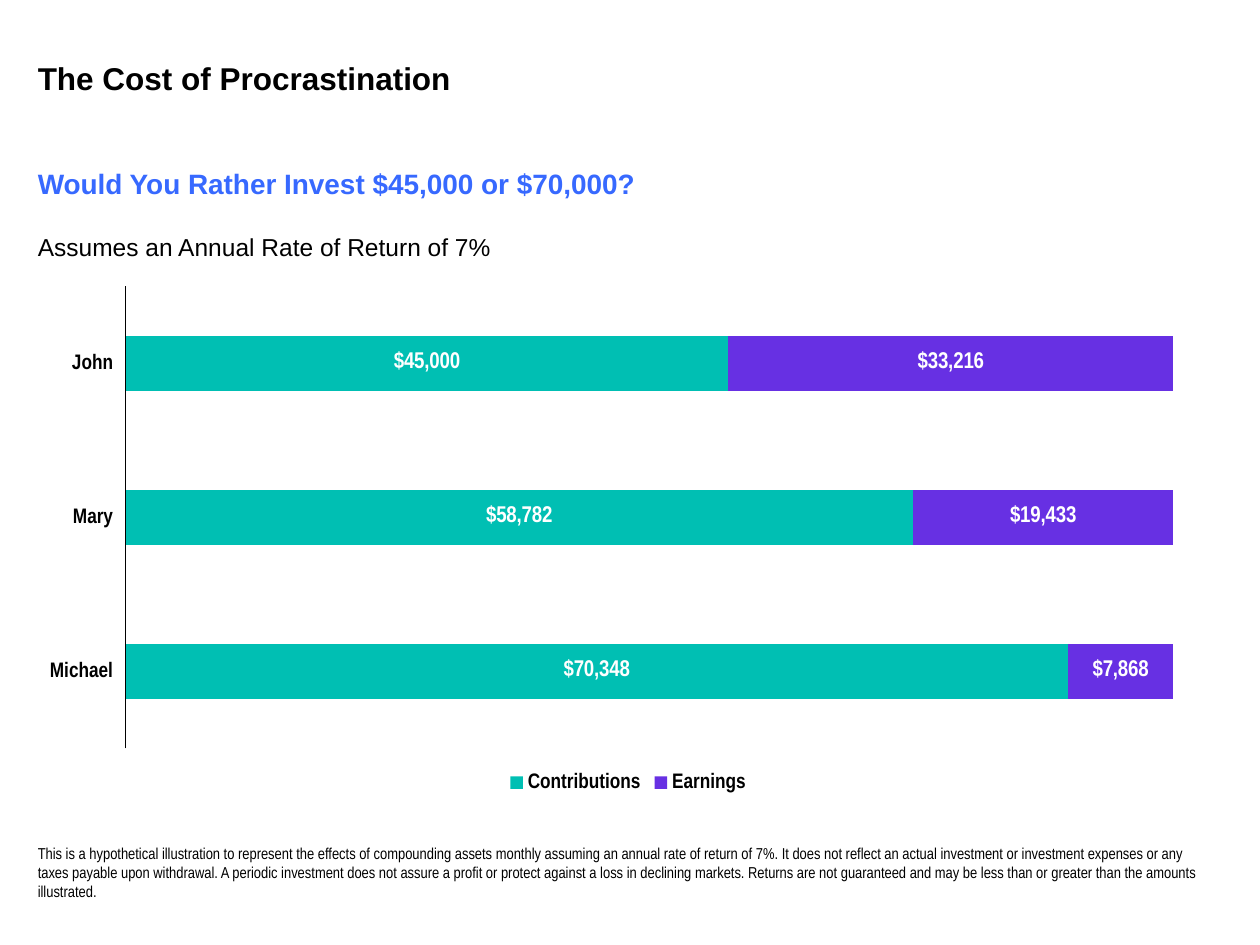
from lxml.etree import SubElement
from pptx import Presentation
from pptx.chart.data import CategoryChartData
from pptx.dml.color import RGBColor
from pptx.enum.chart import XL_CHART_TYPE as ChartType, XL_LABEL_POSITION as LabelPosition
from pptx.enum.chart import XL_LEGEND_POSITION as LegendPosition, XL_TICK_LABEL_POSITION as TickLabels
from pptx.enum.chart import XL_TICK_MARK as TickMark
from pptx.enum.text import MSO_ANCHOR as Anchor, PP_ALIGN as Align
from pptx.oxml.ns import qn
from pptx.util import Inches, Pt

COLORS = {"black": "000000", "white": "FFFFFF", "blue": "3769FF", "teal": "00BFB3", "purple": "6730E3"}
SANS, NARROW = "Arial", "Arial Narrow"

TITLE = [("The Cost of Procrastination", SANS, 18, "black", True)]
QUESTION = [
    ("Would You Rather Invest $45,000 or $70,000?", SANS, 16, "blue", True),
    ("Assumes an Annual Rate of Return of 7%", SANS, 14, "black", False),
]
DISCLAIMER = [(
    "This is a hypothetical illustration to represent the effects of compounding assets monthly "
    "assuming an annual rate of return of 7%. It does not reflect an actual investment or investment "
    "expenses or any taxes payable upon withdrawal. A periodic investment does not assure a profit or "
    "protect against a loss in declining markets. Returns are not guaranteed and may be less than or "
    "greater than the amounts illustrated.", NARROW, 9, "black", False)]
INVESTORS = ["Michael", "Mary", "John"]
SERIES = [
    ("Contributions", (70348, 58782, 45000), "teal"),
    ("Earnings", (7868, 19433, 33216), "purple"),
]

WIDTH, HEIGHT = 10, 7.5
MARGIN = 0.03 * WIDTH
PARAGRAPH_GAP = 18.4
PLOT = {"x": 0.077, "y": 0.02, "w": 0.902, "h": 0.886}


def color(name):
    return RGBColor.from_string(COLORS[name])


def style(font, name, size, shade, bold):
    font.name, font.size, font.bold = name, Pt(size), bold
    font.color.rgb = color(shade)


def place(box, left, top, width, height):
    box.left, box.top, box.width, box.height = map(Inches, (left, top, width, height))


def write(box, lines, anchor=Anchor.TOP):
    frame = box.text_frame
    frame.word_wrap = True
    frame.vertical_anchor = anchor
    frame.margin_left = frame.margin_right = frame.margin_top = frame.margin_bottom = 0
    for index, (text, *look) in enumerate(lines):
        para = frame.add_paragraph() if index else frame.paragraphs[0]
        para.alignment = Align.LEFT
        para.line_spacing = 1.0
        para.space_before = Pt(PARAGRAPH_GAP if index else 0)
        span = para.add_run()
        span.text = text
        style(span.font, *look)


def add_text(slide, lines, top, width, height, anchor=Anchor.TOP):
    box = slide.shapes.add_textbox(*map(Inches, (MARGIN, top, width, height)))
    write(box, lines, anchor)


def fix_plot_area(chart):
    area = chart._chartSpace.chart.plotArea
    for old in area.findall(qn("c:layout")):
        area.remove(old)
    layout = SubElement(area, qn("c:layout"))
    area.insert(0, layout)
    manual = SubElement(layout, qn("c:manualLayout"))
    settings = {"layoutTarget": "inner", "xMode": "edge", "yMode": "edge", **PLOT}
    for tag, value in settings.items():
        SubElement(manual, qn(f"c:{tag}")).set("val", str(value))


def add_savings_chart(slide):
    data = CategoryChartData(number_format="#,##0")
    data.categories = INVESTORS
    for name, values, _ in SERIES:
        data.add_series(name, values)
    frame = slide.shapes.add_chart(
        ChartType.BAR_STACKED, *map(Inches, (0.27, 2.19, 9.43, 4.14)), data)
    chart = frame.chart
    chart.has_title = False
    style(chart.font, SANS, 10, "black", False)

    plot = chart.plots[0]
    plot.gap_width, plot.overlap, plot.vary_by_categories = 182, 100, False
    for series, (_, _, shade) in zip(plot.series, SERIES):
        series.format.fill.solid()
        series.format.fill.fore_color.rgb = color(shade)
        labels = series.data_labels
        labels.show_value = True
        labels.number_format, labels.number_format_is_linked = '"$"#,##0', False
        labels.position = LabelPosition.CENTER
        style(labels.font, NARROW, 13, "white", True)

    names = chart.category_axis
    names.major_tick_mark = names.minor_tick_mark = TickMark.NONE
    names.tick_label_position = TickLabels.LOW
    names.format.line.color.rgb = color("black")
    names.format.line.width = Pt(1)
    style(names.tick_labels.font, NARROW, 12, "black", True)

    amounts = chart.value_axis
    amounts.minimum_scale, amounts.maximum_scale = 0, 80000
    amounts.has_major_gridlines = False
    amounts.visible = False

    chart.has_legend = True
    chart.legend.position = LegendPosition.BOTTOM
    chart.legend.include_in_layout = False
    style(chart.legend.font, NARROW, 12, "black", True)
    fix_plot_area(chart)


def main():
    deck = Presentation()
    deck.slide_width, deck.slide_height = Inches(WIDTH), Inches(HEIGHT)
    slide = deck.slides.add_slide(deck.slide_layouts[5])
    place(slide.shapes.title, MARGIN, 0.47, 7, 0.7)
    write(slide.shapes.title, TITLE)
    add_text(slide, QUESTION, 1.32, 8.5, 0.86)
    add_savings_chart(slide)
    add_text(slide, DISCLAIMER, 6.7, 9.3, 0.45, Anchor.BOTTOM)
    deck.save("out.pptx")


if __name__ == "__main__":
    main()
